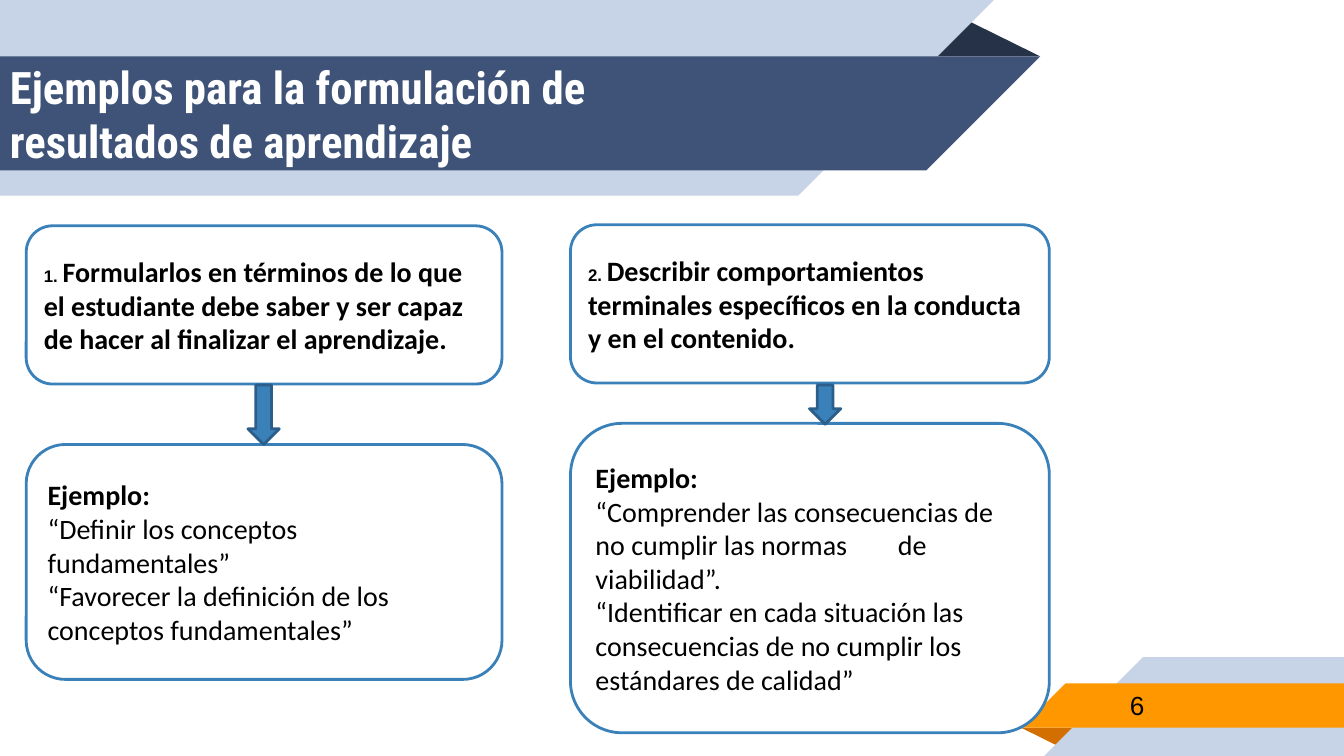
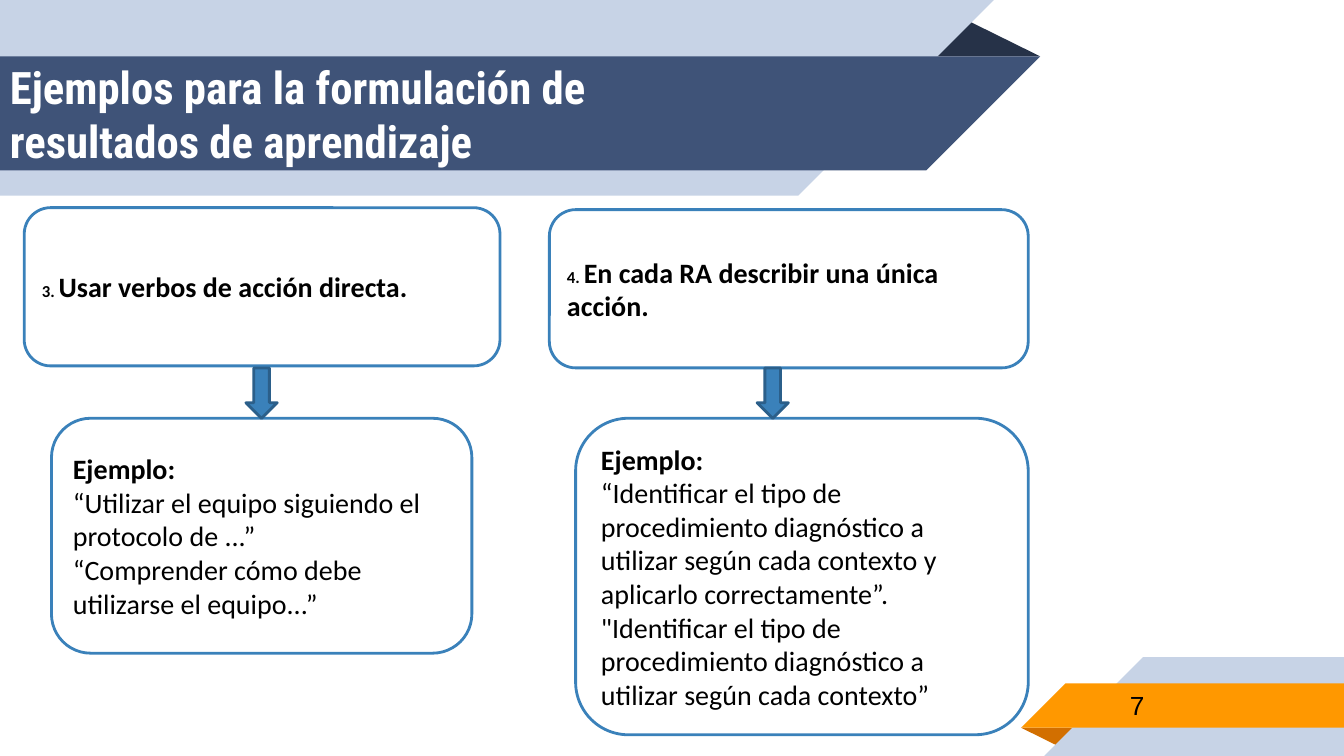
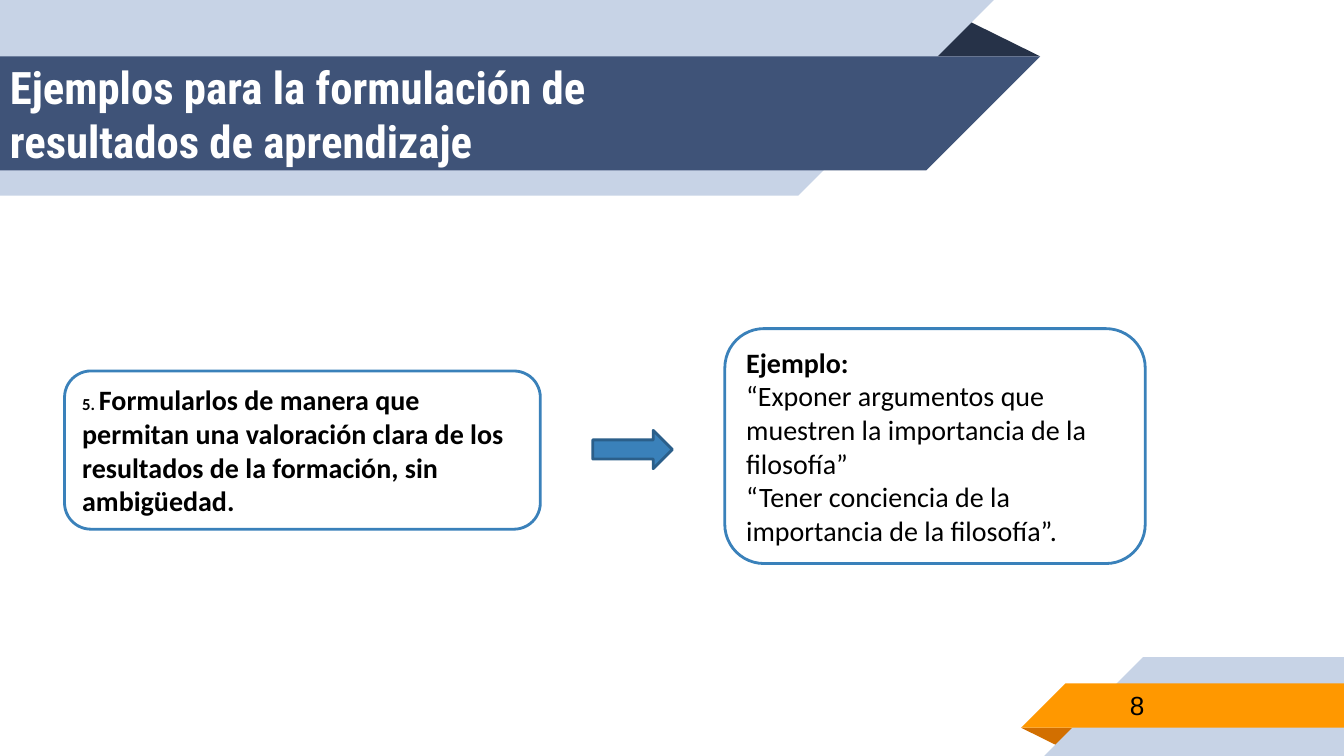
from pptx import Presentation
from pptx.dml.color import RGBColor
from pptx.enum.shapes import MSO_SHAPE
from pptx.enum.text import MSO_ANCHOR, PP_ALIGN
from pptx.util import Inches, Pt

ROUNDED = MSO_SHAPE.ROUNDED_RECTANGLE
DOWN, RIGHT = MSO_SHAPE.DOWN_ARROW, MSO_SHAPE.RIGHT_ARROW
MIDDLE, LEFT = MSO_ANCHOR.MIDDLE, PP_ALIGN.LEFT

NAVY, PALE, SLATE = "263248", "C7D3E6", "3F5378"
ORANGE, RUST = "FF9800", "D26F00"
BLUE, DEEP_BLUE, WHITE, BLACK = "3A81BA", "2B5F8A", "FFFFFF", "000000"

TITLE = "Ejemplos para la formulación de resultados de aprendizaje"
FIRST_NUMBER = 6

prs = Presentation()
prs.slide_width, prs.slide_height = Inches(13.333), Inches(7.5)
blank = prs.slide_layouts[6]

# All places are percentages of the slide: x of its width, y of its height
COL, ROW = prs.slide_width / 100, prs.slide_height / 100


def paint(shape, fill, line=None):
    shape.shadow.inherit = False
    shape.fill.solid()
    shape.fill.fore_color.rgb = RGBColor.from_string(fill)
    if line:
        shape.line.color.rgb = RGBColor.from_string(line)
        shape.line.width = Pt(2)
    else:
        shape.line.fill.background()


def write(shape, texts, size, font, color=BLACK, bold_first=False):
    frame = shape.text_frame
    frame.word_wrap = True
    frame.vertical_anchor = MIDDLE
    for i, text in enumerate(texts):
        paragraph = frame.paragraphs[0] if i == 0 else frame.add_paragraph()
        paragraph.text = text
        paragraph.alignment = LEFT
        paragraph.font.size = Pt(size)
        paragraph.font.name = font
        paragraph.font.bold = bold_first and i == 0
        paragraph.font.color.rgb = RGBColor.from_string(color)
    return frame


# Ribbons at the top and bottom, from back to front
RIBBONS = [
    (NAVY, [(68.85, 7.47), (71.63, 2.4), (77.4, 7.47)]),
    (PALE, [(0, 0), (73.95, 0), (59.4, 25.87), (0, 25.87)]),
    (SLATE, [(0, 7.47), (77.4, 7.47), (68.93, 22.53), (0, 22.53)]),
    (RUST, [(75.98, 96.27), (80.25, 96.27), (78.86, 98.8)]),
    (PALE, [(85.05, 86.93), (100, 86.93), (100, 100), (77.7, 100)]),
    (ORANGE, [(79.28, 90.4), (100, 90.4), (100, 96.27), (75.98, 96.27)]),
]
TITLE_PLACE = (0, 7.6, 57.53, 14.93)
NUMBER_PLACE = (83.33, 90.13, 16.28, 6.13)
RULE_HEIGHT = 20.93

# Per slide: number, its font, rule, rule place (x, y, width),
# examples, example place, arrow kind, arrow place
SLIDES = [
    [
        ("1. ", "Arial",
         "Formularlos en términos de lo que el estudiante debe saber y ser "
         "capaz de hacer al finalizar el aprendizaje.",
         (1.95, 29.87, 35.4),
         ["“Definir los conceptos fundamentales”",
          "“Favorecer la definición de los conceptos fundamentales”"],
         (1.95, 58.8, 35.4, 31.07), DOWN, (18.45, 50.93, 2.33, 7.87)),
        ("2. ", "Arial",
         "Describir comportamientos terminales específicos en la conducta y "
         "en el contenido.",
         (42.45, 29.73, 35.63),
         ["“Comprender las consecuencias de no cumplir las normas \tde "
          "viabilidad”.",
          "“Identificar en cada situación las consecuencias de no cumplir "
          "los estándares de calidad”"],
         (42.45, 56, 35.63, 40.93), DOWN, (60.23, 50.93, 2.33, 5.2)),
    ],
    [
        ("3. ", "Calibri", "Usar verbos de acción directa.",
         (1.8, 27.47, 35.4),
         ["“Utilizar el equipo siguiendo el protocolo de ...”",
          "“Comprender cómo debe utilizarse el equipo...”"],
         (3.83, 55.33, 31.28, 31.07), DOWN, (18.3, 48.67, 2.33, 6.67)),
        ("4. ", "Calibri", "En cada RA describir una única acción.",
         (40.88, 27.73, 35.63),
         ["“Identificar el tipo de procedimiento diagnóstico a utilizar "
          "según cada contexto y aplicarlo correctamente”.",
          "\"Identificar el tipo de procedimiento diagnóstico a utilizar "
          "según cada contexto”"],
         (42.83, 55.33, 33.68, 41.87), DOWN, (56.33, 48.67, 2.33, 6.67)),
    ],
    [
        ("5. ", "Calibri",
         "Formularlos de manera que permitan una valoración clara de los "
         "resultados de la formación, sin ambigüedad.",
         (4.8, 49.07, 35.4),
         ["“Exponer argumentos que muestren la importancia de la filosofía”",
          "“Tener conciencia de la importancia de la filosofía”."],
         (53.93, 43.47, 31.28, 31.07), RIGHT, (44.1, 56.93, 5.93, 5.07)),
    ],
]

for page, rules in enumerate(SLIDES, FIRST_NUMBER):
    shapes = prs.slides.add_slide(blank).shapes

    # The ribbons are drawn once and moved to the layout all slides share
    if page == FIRST_NUMBER:
        for color, corners in RIBBONS:
            points = [(round(x * COL), round(y * ROW)) for x, y in corners]
            outline = shapes.build_freeform(*points[0])
            outline.add_line_segments(points[1:], close=True)
            ribbon = outline.convert_to_shape()
            paint(ribbon, color)
            blank.shapes.element.append(ribbon.element)

    # Title and page number
    for (x, y, w, h), text, size, font, color, bold in (
        (TITLE_PLACE, TITLE, 32, "Roboto Condensed", WHITE, True),
        (NUMBER_PLACE, str(page), 18.7, "Arial", BLACK, False),
    ):
        label = shapes.add_textbox(
            round(x * COL), round(y * ROW), round(w * COL), round(h * ROW))
        frame = write(label, [text], size, font, color, bold)
        frame.margin_top = frame.margin_bottom = Inches(0.1)

    # Each rule, its examples and the arrow between them
    for number, number_font, rule, rule_place, examples, example_place, \
            arrow, arrow_place in rules:
        parts = []
        for kind, (x, y, w, h), fill, line in (
            (ROUNDED, (*rule_place, RULE_HEIGHT), WHITE, BLUE),
            (ROUNDED, example_place, WHITE, BLUE),
            (arrow, arrow_place, BLUE, DEEP_BLUE),
        ):
            part = shapes.add_shape(
                kind, round(x * COL), round(y * ROW),
                round(w * COL), round(h * ROW))
            paint(part, fill, line)
            parts.append(part)

        frame = write(parts[0], [number], 20, "Calibri", bold_first=True)
        statement = frame.paragraphs[0]
        statement.runs[0].font.size = Pt(12)
        statement.runs[0].font.name = number_font
        statement.add_run().text = rule
        write(parts[1], ["Ejemplo:", *examples], 20, "Calibri",
              bold_first=True)

prs.save("out.pptx")
